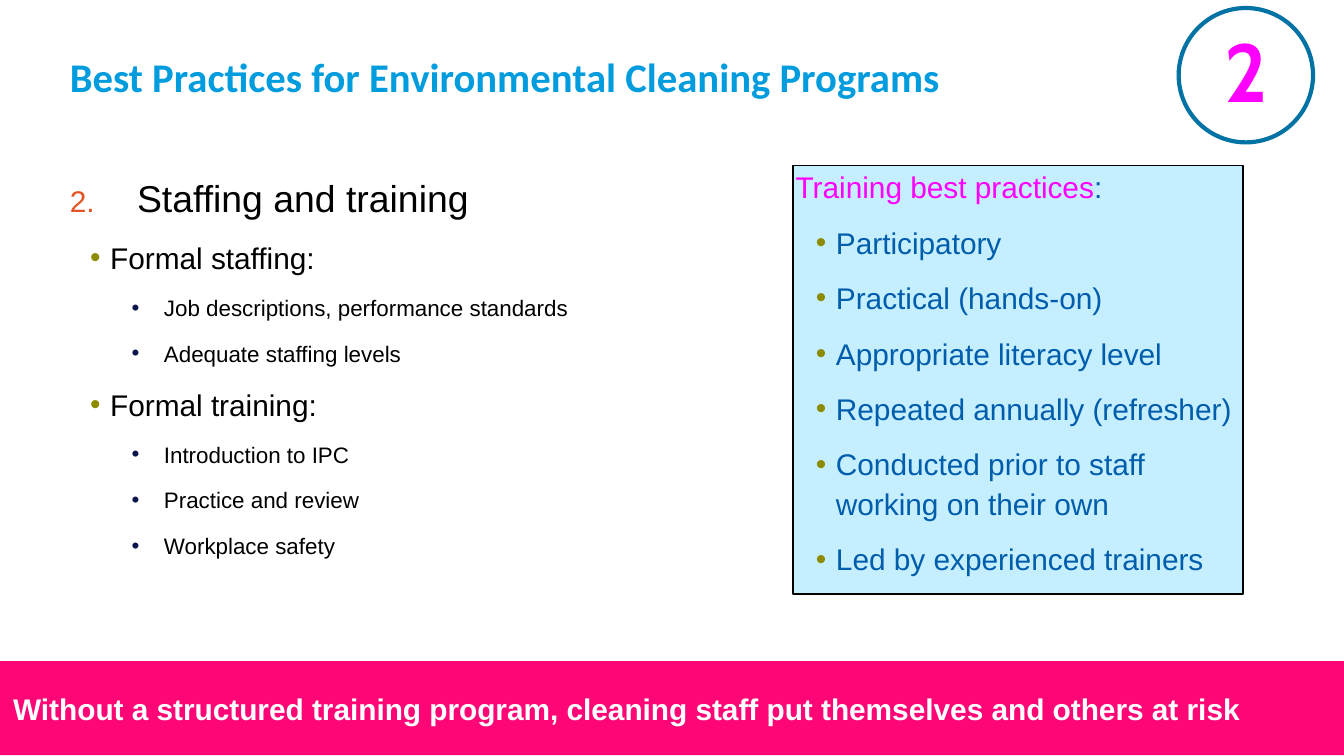
"""Build the slide on staffing and training for environmental cleaning programs."""
from lxml import etree
from pptx import Presentation
from pptx.dml.color import RGBColor
from pptx.enum.shapes import MSO_SHAPE
from pptx.enum.text import MSO_ANCHOR, PP_ALIGN
from pptx.oxml.ns import qn
from pptx.util import Inches, Pt

RECT, OVAL = MSO_SHAPE.RECTANGLE, MSO_SHAPE.OVAL
TOP, MIDDLE, BOTTOM = MSO_ANCHOR.TOP, MSO_ANCHOR.MIDDLE, MSO_ANCHOR.BOTTOM
LEFT, CENTER = PP_ALIGN.LEFT, PP_ALIGN.CENTER

BLACK, WHITE, MAGENTA, BLUE = "000000", "FFFFFF", "FF00FF", "005DAB"
NUMBER = {"indent": 0.5, "hang": 0.5, "color": "E25423", "size": 80, "start": 2}
OUTER = {"indent": 0.3, "hang": 0.15, "color": "8D8B00"}
INNER = {"indent": 0.7, "hang": 0.24, "color": "09164D"}
NARROW = (0.02, 0, 0.02, 0)


def rgb(value):
    return RGBColor.from_string(value)


def add_text(sp, runs, size=16, font="Arial", bold=False, align=LEFT, anchor=TOP,
             insets=(0.1, 0.05, 0.1, 0.05), level=0, bullet=None, spacing=None,
             before=0, after=0):
    tf = sp.text_frame
    tf.word_wrap = True
    tf.vertical_anchor = anchor
    tf.margin_left, tf.margin_top, tf.margin_right, tf.margin_bottom = map(Inches, insets)
    first = not tf.text
    p = tf.paragraphs[0] if first else tf.add_paragraph()
    if bullet:
        pPr = p._p.get_or_add_pPr()
        pPr.set("marL", str(Inches(bullet["indent"])))
        pPr.set("indent", str(-Inches(bullet["hang"])))
        clr = etree.SubElement(pPr, qn("a:buClr"))
        etree.SubElement(clr, qn("a:srgbClr"), val=bullet["color"])
        etree.SubElement(pPr, qn("a:buSzPct"), val=str(bullet.get("size", 100) * 1000))
        etree.SubElement(pPr, qn("a:buFont"), typeface="Arial")
        if "start" in bullet:
            etree.SubElement(pPr, qn("a:buAutoNum"), type="arabicPeriod",
                             startAt=str(bullet["start"]))
        else:
            etree.SubElement(pPr, qn("a:buChar"), char="•")
    p.level = level
    p.alignment = align
    p.space_before = Pt(0 if first else before)
    p.space_after = Pt(after)
    if spacing:
        p.line_spacing = spacing
    for text, color in runs:
        r = p.add_run()
        r.text = text
        r.font.size = Pt(size)
        r.font.name = font
        r.font.bold = bold
        r.font.color.rgb = rgb(color)


prs = Presentation()
prs.slide_width, prs.slide_height = Inches(10), Inches(10 * 9 / 16)
s = prs.slides.add_slide(prs.slide_layouts[6])

title = s.shapes.add_textbox(Inches(0.5), Inches(0.23), Inches(9), Inches(0.94))
add_text(title, [("Best Practices for Environmental Cleaning Programs", "009CDE")],
         size=21.8, font="Calibri", bold=True, anchor=BOTTOM,
         insets=(0.02, 0, 0.45, 0.42), spacing=Pt(30))

body = s.shapes.add_textbox(Inches(0.5), Inches(1.27), Inches(9), Inches(3.65))
styles = [(20, NUMBER), (16, OUTER), (12, INNER)]
for level, text in [
    (0, "Staffing and training"),
    (1, "Formal staffing:"),
    (2, "Job descriptions, performance standards"),
    (2, "Adequate staffing levels"),
    (1, "Formal training:"),
    (2, "Introduction to IPC"),
    (2, "Practice and review"),
    (2, "Workplace safety"),
]:
    size, bullet = styles[level]
    add_text(body, [(text, BLACK)], size=size, insets=NARROW, level=level,
             bullet=bullet, spacing=1.1, before=3.9, after=4.7)

shapes = []
for kind, left, top, width, height, fill, line, weight in [
    (RECT, 5.9, 1.23, 3.35, 3.19, "C5EEFF", BLACK, 0.75),
    (RECT, 0, 4.92, 10, 0.7, "FF0676", None, 0),
    (OVAL, 8.77, 0.06, 1, 1, None, "0073A4", 2.25),
]:
    sp = s.shapes.add_shape(kind, Inches(left), Inches(top), Inches(width), Inches(height))
    sp.shadow.inherit = False
    if fill:
        sp.fill.solid()
        sp.fill.fore_color.rgb = rgb(fill)
    else:
        sp.fill.background()
    if line:
        sp.line.color.rgb = rgb(line)
        sp.line.width = Pt(weight)
    else:
        sp.line.fill.background()
    shapes.append(sp)
panel, banner, ring = shapes

add_text(panel, [("Training best practices", MAGENTA), (":", BLUE)],
         insets=NARROW, spacing=1.1, after=4.7)
for text in [
    "Participatory",
    "Practical (hands-on)",
    "Appropriate literacy level",
    "Repeated annually (refresher)",
    "Conducted prior to staff working on their own",
    "Led by experienced trainers",
]:
    add_text(panel, [(text, BLUE)], insets=NARROW, level=1, bullet=OUTER,
             spacing=1.1, before=3.9, after=4.7)

add_text(banner, [("Without a structured training program, cleaning staff put "
                   "themselves and others at risk", WHITE)], bold=True, anchor=MIDDLE)

number = s.shapes.add_textbox(Inches(8.67), Inches(0.1), Inches(1.2), Inches(0.84))
add_text(number, [("2", MAGENTA)], size=44, font="Cabin", bold=True, align=CENTER)

prs.save("out.pptx")
